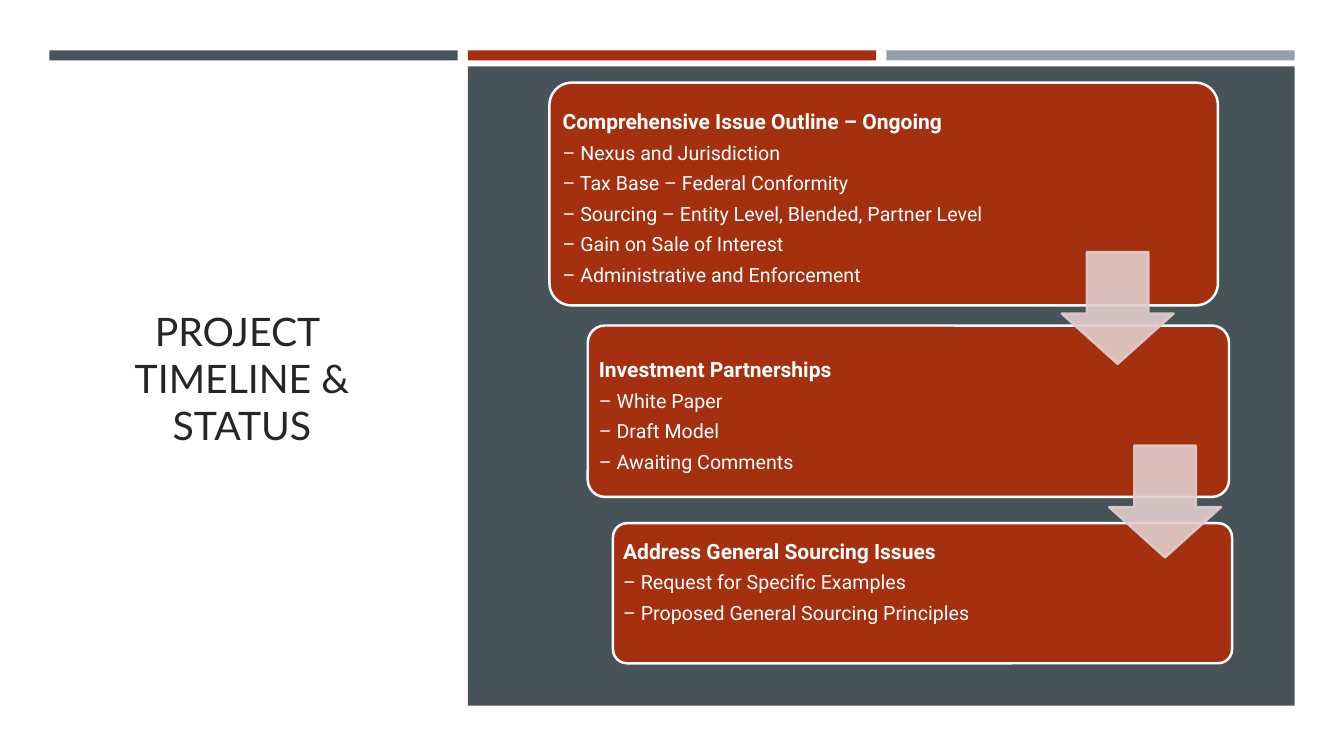
"""Build the project timeline slide: a title beside three stepped stages."""
from lxml import etree
from pptx import Presentation
from pptx.dml.color import RGBColor
from pptx.enum.shapes import MSO_SHAPE
from pptx.enum.text import MSO_ANCHOR, MSO_AUTO_SIZE, PP_ALIGN
from pptx.oxml.ns import qn
from pptx.util import Pt

RECTANGLE = MSO_SHAPE.RECTANGLE
ROUNDED = MSO_SHAPE.ROUNDED_RECTANGLE
DOWN_ARROW = MSO_SHAPE.DOWN_ARROW
MIDDLE = MSO_ANCHOR.MIDDLE
CENTER = PP_ALIGN.CENTER
LEFT = PP_ALIGN.LEFT
NO_AUTOFIT = MSO_AUTO_SIZE.NONE

WHITE = RGBColor(0xFF, 0xFF, 0xFF)
INK = RGBColor(0x26, 0x26, 0x26)
SLATE = RGBColor(0x46, 0x53, 0x59)
RUST = RGBColor(0xA5, 0x30, 0x0F)
GREY = RGBColor(0x96, 0x9F, 0xA7)
BLUSH = RGBColor(0xE1, 0xCD, 0xCC)

PX = 9144
HEADING = {"name": "Roboto", "size": Pt(15), "bold": True}
ITEM = {"name": "Roboto", "size": Pt(14), "bold": False}
TITLE = {"name": "Lato", "size": Pt(28), "bold": False}


def add_block(kind, box, fill, outline=None, adjustments=()):
    """Add a filled preset shape, outlined only when a colour is given."""
    shape = slide.shapes.add_shape(kind, *[length * PX for length in box])
    shape.shadow.inherit = False
    shape.fill.solid()
    shape.fill.fore_color.rgb = fill
    if outline is None:
        shape.line.fill.background()
    else:
        shape.line.color.rgb = outline
        shape.line.width = Pt(1.75)
    for index, value in enumerate(adjustments):
        shape.adjustments[index] = value
    return shape


def format_font(font, color, values):
    """Apply a colour and a dict of font values."""
    font.color.rgb = color
    for name, value in values.items():
        setattr(font, name, value)


presentation = Presentation()
presentation.slide_width = 1333 * PX
presentation.slide_height = 750 * PX
slide = presentation.slides.add_slide(presentation.slide_layouts[5])
slide.background.fill.solid()
slide.background.fill.fore_color.rgb = WHITE

title = slide.shapes.title
title_box = {"left": 64, "top": 117, "width": 352, "height": 515}
for name, length in title_box.items():
    setattr(title, name, length * PX)
title_frame = title.text_frame
title_frame.word_wrap = True
title_frame.auto_size = NO_AUTOFIT
title_frame.vertical_anchor = MIDDLE
title_paragraph = title_frame.paragraphs[0]
title_paragraph.text = "PROJECT \vTIMELINE & STATUS"
title_paragraph.alignment = CENTER
for run in title_paragraph.runs:
    format_font(run.font, INK, TITLE)

for column, color in enumerate((SLATE, RUST, GREY)):
    add_block(RECTANGLE, (49 + column * 415, 50, 405, 10), color)
add_block(RECTANGLE, (464, 66, 820, 634), SLATE)

stages = [
    ((545, 82, 663, 221), (552, 88, 444, 208), (6, 6),
     ["Comprehensive Issue Outline – Ongoing",
      "– Nexus and Jurisdiction",
      "– Tax Base – Federal Conformity",
      "– Sourcing – Entity Level, Blended, Partner Level",
      "– Gain on Sale of Interest",
      "– Administrative and Enforcement"]),
    ((583, 323, 636, 170), (588, 328, 444, 160), (6, 6),
     ["Investment Partnerships",
      "– White Paper",
      "– Draft Model",
      "– Awaiting Comments"]),
    ((608, 519, 614, 139), (612, 523, 430, 130), (0, 30),
     ["Address General Sourcing Issues",
      "– Request for Specific Examples",
      "– Proposed General Sourcing Principles"]),
]
for card_box, text_box, (inset_top, inset_bottom), lines in stages:
    add_block(ROUNDED, card_box, RUST, WHITE, (0.1,))
    label = slide.shapes.add_textbox(*[length * PX for length in text_box])
    frame = label.text_frame
    frame_format = {
        "word_wrap": True,
        "vertical_anchor": MIDDLE,
        "margin_left": 6 * PX,
        "margin_right": 6 * PX,
        "margin_top": inset_top * PX,
        "margin_bottom": inset_bottom * PX,
    }
    for name, value in frame_format.items():
        setattr(frame, name, value)
    for index, line in enumerate(lines):
        paragraph = frame.add_paragraph() if index else frame.paragraphs[0]
        paragraph.alignment = LEFT
        paragraph.line_spacing = 1.3
        run = paragraph.add_run()
        run.text = line
        format_font(run.font, WHITE, ITEM if index else HEADING)

for left, top in ((1053, 250), (1100, 442)):
    arrow = add_block(DOWN_ARROW, (left, top, 111, 111), BLUSH, BLUSH, (0.55, 0.45))
    for color in arrow.element.spPr.iter(qn("a:srgbClr")):
        etree.SubElement(color, qn("a:alpha")).set("val", "90000")

presentation.save("out.pptx")
